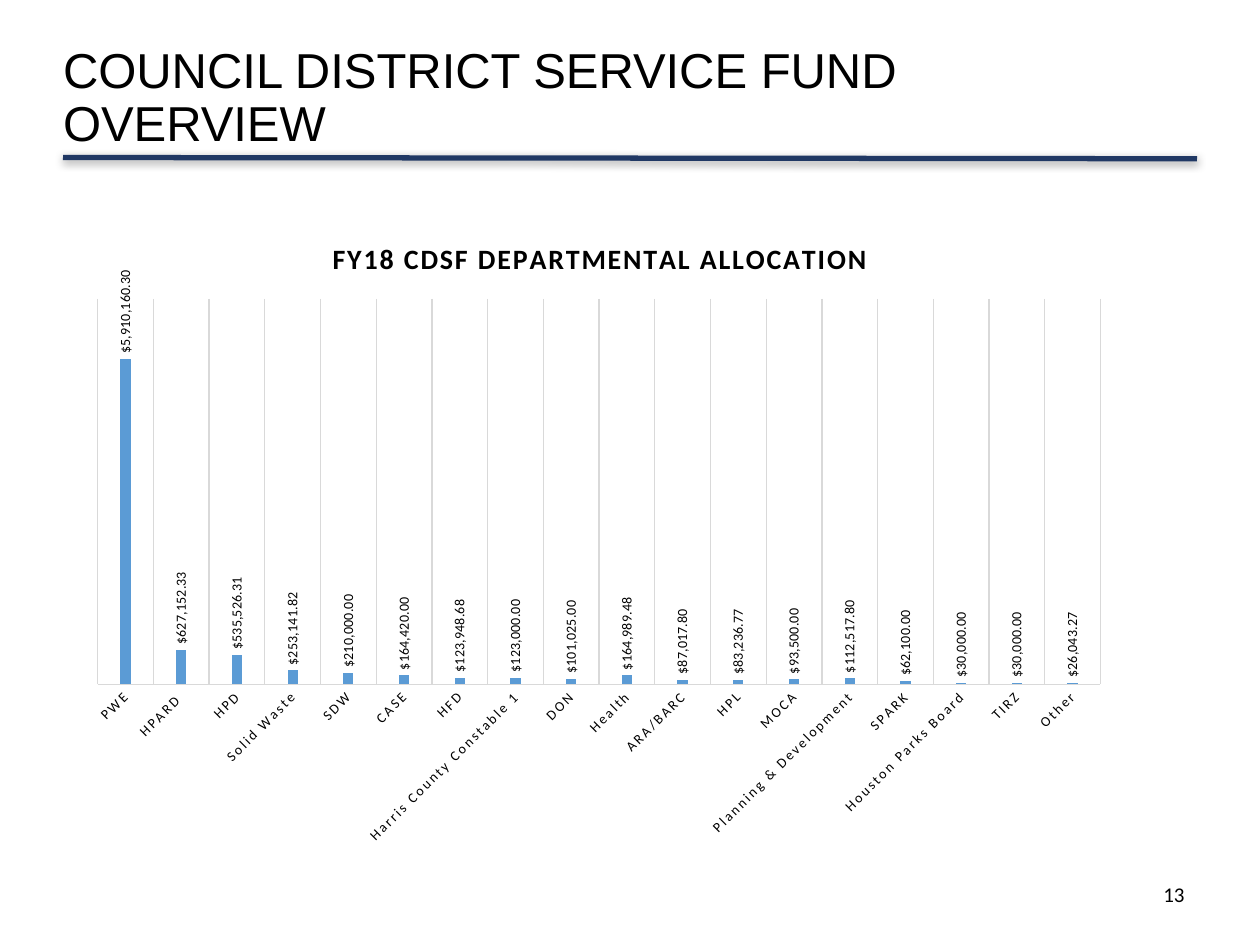
from lxml import etree
from pptx import Presentation
from pptx.chart.data import CategoryChartData
from pptx.dml.color import RGBColor
from pptx.enum.chart import XL_CHART_TYPE, XL_LABEL_POSITION, XL_TICK_LABEL_POSITION, XL_TICK_MARK
from pptx.enum.shapes import MSO_CONNECTOR
from pptx.enum.text import MSO_ANCHOR, MSO_AUTO_SIZE, PP_ALIGN
from pptx.oxml import parse_xml
from pptx.oxml.ns import nsdecls, qn
from pptx.util import Inches, Pt

# Content
TITLE = "COUNCIL DISTRICT SERVICE FUND\vOVERVIEW"
PAGE = "13"
CHART_TITLE = "FY18 CDSF DEPARTMENTAL ALLOCATION"
ALLOCATIONS = [
    ("PWE", 5910160.30), ("HPARD ", 627152.33), ("HPD", 535526.31),
    ("Solid Waste", 253141.82), ("SDW", 210000), ("CASE", 164420),
    ("HFD", 123948.68), ("Harris County Constable 1", 123000),
    ("DON", 101025), ("Health", 164989.48), ("ARA/BARC", 87017.80),
    ("HPL", 83236.77), ("MOCA", 93500), ("Planning & Development", 112517.80),
    ("SPARK", 62100), ("Houston Parks Board", 30000), ("TIRZ", 30000),
    ("Other", 26043.27),
]
MONEY = '"$"#,##0.00'
LETTER_SPACING = "120"  # hundredths of a point
COLORS = {"text": "000000", "rule": "203864", "bar": "5B9BD5", "grid": "D9D9D9"}


def color(name):
    return RGBColor.from_string(COLORS[name])


def style_font(font, size, name="Calibri", bold=False):
    font.size, font.name, font.bold = Pt(size), name, bold
    font.color.rgb = color("text")


def style_line(line, name, width):
    line.color.rgb = color(name)
    line.width = Pt(width)


def rotate(text_props, degrees):
    body = text_props.find(qn("a:bodyPr"))
    body.set("rot", str(degrees * 60000))
    body.set("vert", "horz")


def manual_layout(**parts):
    """Chart layout in fractions of the chart's width and height."""
    layout = etree.Element(qn("c:layout"))
    manual = etree.SubElement(layout, qn("c:manualLayout"))
    if "w" in parts:
        etree.SubElement(manual, qn("c:layoutTarget")).set("val", "inner")
    for mode in ("xMode", "yMode"):
        etree.SubElement(manual, qn("c:" + mode)).set("val", "edge")
    for key, value in parts.items():
        etree.SubElement(manual, qn("c:" + key)).set("val", str(value))
    return layout


prs = Presentation()
prs.slide_width, prs.slide_height = Inches(10), Inches(7.5)
s = prs.slides.add_slide(prs.slide_layouts[5])

# Title
sp = s.shapes.title
sp.left, sp.top, sp.width, sp.height = (Inches(v) for v in (0.5, 0.33, 6.86, 0.92))
tf = sp.text_frame
tf.text = TITLE
tf.word_wrap = True
tf.auto_size = MSO_AUTO_SIZE.NONE
tf.vertical_anchor = MSO_ANCHOR.MIDDLE
tf.margin_left = tf.margin_right = tf.margin_top = tf.margin_bottom = 0
p = tf.paragraphs[0]
p.alignment = PP_ALIGN.LEFT
p.line_spacing = 0.9
for r in p.runs:
    style_font(r.font, 28, "Arial")

# Rule under the title, with a soft shadow
rule = s.shapes.add_connector(MSO_CONNECTOR.STRAIGHT, Inches(0.5), Inches(1.25),
                              Inches(9.5), Inches(1.26))
style_line(rule.line, "rule", 3)
rule.line._get_or_add_ln().addnext(parse_xml(
    f'<a:effectLst {nsdecls("a")}><a:outerShdw blurRad="{Pt(5)}" dist="{Pt(1.6)}" '
    'dir="5400000" rotWithShape="0"><a:srgbClr val="000000"><a:alpha val="38000"/>'
    '</a:srgbClr></a:outerShdw></a:effectLst>'))

# Chart
data = CategoryChartData(number_format=MONEY)
data.categories = [name for name, _ in ALLOCATIONS]
data.add_series("Series 1", [value for _, value in ALLOCATIONS])
chart = s.shapes.add_chart(XL_CHART_TYPE.COLUMN_CLUSTERED, Inches(0.61), Inches(1.71),
                           Inches(8.29), Inches(5.1), data).chart
style_font(chart.font, 10)
chart.has_legend = False

chart.has_title = True
title = chart.chart_title
title.include_in_layout = False
title.text_frame.text = CHART_TITLE
r = title.text_frame.paragraphs[0].runs[0]
style_font(r.font, 16, bold=True)
r.font._element.set("spc", LETTER_SPACING)
title_xml = title._element
for old in title_xml.findall(qn("c:layout")):
    title_xml.remove(old)
title_xml.find(qn("c:tx")).addnext(manual_layout(x=0.24, y=0.03))

plot_area = chart._chartSpace.chart.plotArea
for old in plot_area.findall(qn("c:layout")):
    plot_area.remove(old)
plot_area.insert(0, manual_layout(x=0.02, y=0.13, w=0.96, h=0.6))

# Bars and their labels
plot = chart.plots[0]
plot.gap_width, plot.overlap = 444, -90
plot.vary_by_categories = False
bars = plot.series[0]
bars.format.fill.solid()
bars.format.fill.fore_color.rgb = color("bar")
labels = bars.data_labels
labels.show_value = True
labels.position = XL_LABEL_POSITION.OUTSIDE_END
labels.number_format, labels.number_format_is_linked = MONEY, False
style_font(labels.font, 8)
rotate(labels._element.find(qn("c:txPr")), -90)

# Axes
cat = chart.category_axis
cat.major_tick_mark = cat.minor_tick_mark = XL_TICK_MARK.NONE
cat.tick_label_position = XL_TICK_LABEL_POSITION.NEXT_TO_AXIS
cat.has_major_gridlines = True
style_line(cat.format.line, "grid", 0.75)
style_line(cat.major_gridlines.format.line, "grid", 0.75)
style_font(cat.tick_labels.font, 8)
cat.tick_labels.font._element.set("spc", LETTER_SPACING)
rotate(cat._element.find(qn("c:txPr")), -45)
val = chart.value_axis
val.minimum_scale, val.maximum_scale = 0, 7000000
val.has_major_gridlines = False
val.visible = False
val.tick_labels.number_format = MONEY
val.tick_labels.number_format_is_linked = False

# Page number
sp = s.shapes.add_textbox(Inches(7.17), Inches(6.95), Inches(2.33), Inches(0.4))
tf = sp.text_frame
tf.word_wrap = True
tf.text = PAGE
p = tf.paragraphs[0]
p.alignment = PP_ALIGN.RIGHT
style_font(p.runs[0].font, 12)

prs.save("out.pptx")
